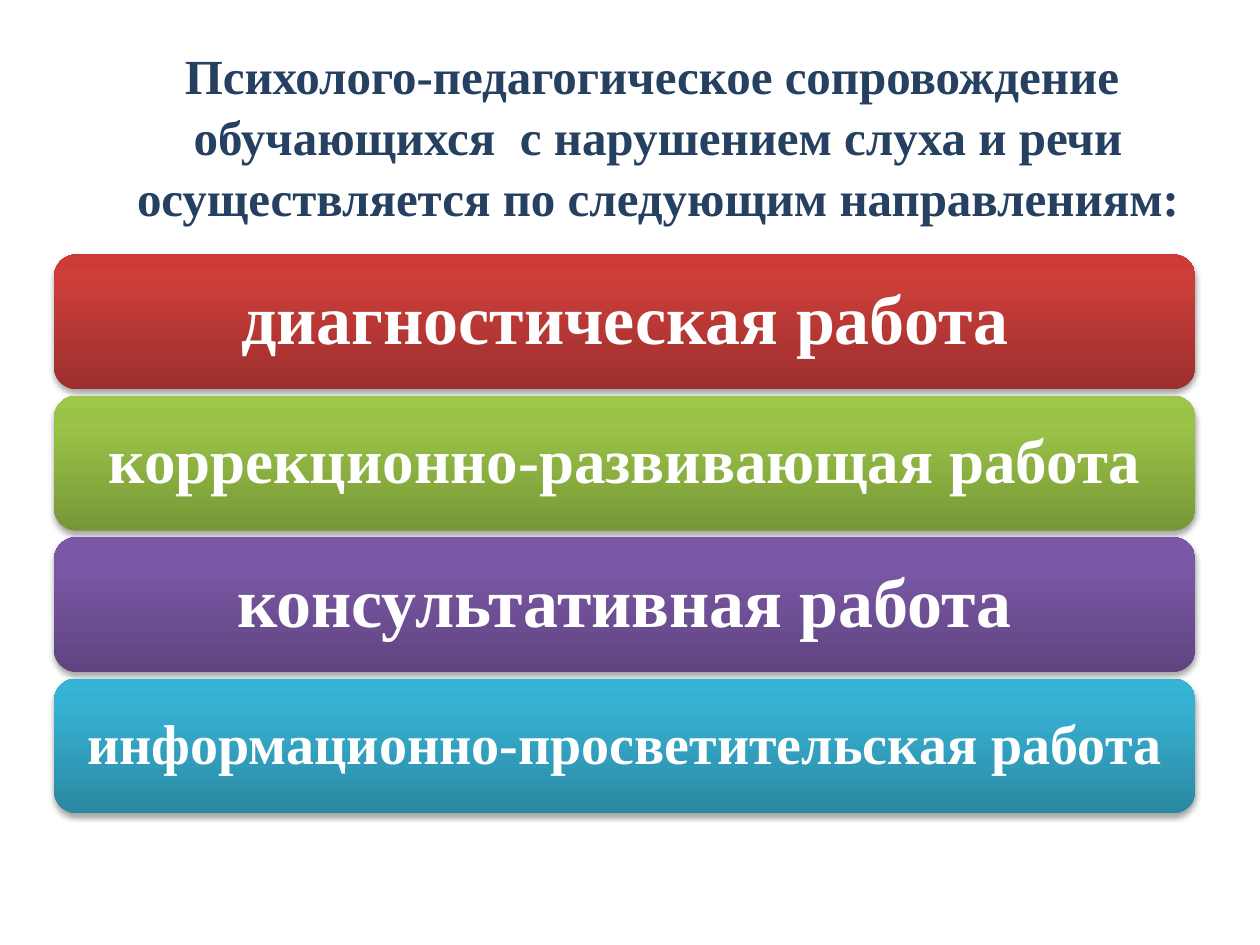
"""Build a slide with a title and four stacked coloured bars."""
import pptx
import pptx.dml.color
import pptx.enum.shapes
import pptx.enum.text
import pptx.oxml
import pptx.oxml.ns
import pptx.util

Cm = pptx.util.Cm
Pt = pptx.util.Pt
NAMESPACE = pptx.oxml.ns.nsdecls("a")

TITLE = ("Психолого-педагогическое сопровождение  обучающихся  с нарушением "
         "слуха и речи осуществляется по следующим направлениям:")
DIRECTIONS = [
    ("диагностическая работа", 40, ("9C2F2D", "CB3E3A", "CE3B37")),
    ("коррекционно-развивающая работа", 36, ("779737", "9BC348", "9DC746")),
    ("консультативная работа", 40, ("5F4480", "7B58A6", "7C57A8")),
    ("информационно-просветительская работа", 32, ("2A88A2", "37B1D2", "34B4D6")),
]
BAR_TOP, BAR_PITCH = 5.13, 2.85


def color(value):
    return pptx.dml.color.RGBColor.from_string(value)


def apply(target, values):
    for name, value in values.items():
        setattr(target, name, value)


class SlideBuilder:
    font = {"name": "Times New Roman", "bold": True}
    centered = {"alignment": pptx.enum.text.PP_ALIGN.CENTER}
    stops = (0, 80, 100)

    def __init__(self, page):
        self.page = page

    def span(self, para, text, size, hex_color):
        span = para.add_run()
        span.text = text
        apply(span.font, {**self.font, "size": Pt(size)})
        span.font.color.rgb = color(hex_color)

    def title(self, text, left, top, width, height):
        box = self.page.shapes.add_textbox(Cm(left), Cm(top), Cm(width), Cm(height))
        box.text_frame.word_wrap = True
        para = box.text_frame.paragraphs[0]
        apply(para, {**self.centered, "line_spacing": 1.04})
        properties = para._p.get_or_add_pPr()
        properties.set("marL", str(Cm(0.95)))
        properties.set("indent", str(Cm(-0.95)))
        self.span(para, "\t", 24, "002060")
        self.span(para, text, 28, "254061")

    def gradient(self, shape, colors):
        stops = "".join(
            f'<a:gs pos="{stop * 1000}"><a:srgbClr val="{value}"/></a:gs>'
            for stop, value in zip(self.stops, colors))
        shape._element.spPr.append(pptx.oxml.parse_xml(
            f'<a:gradFill {NAMESPACE} rotWithShape="1"><a:gsLst>{stops}</a:gsLst>'
            '<a:lin ang="16200000" scaled="0"/></a:gradFill>'))

    def drop_shadow(self, shape):
        shape.shadow.inherit = False
        effects = shape._element.spPr.find(pptx.oxml.ns.qn("a:effectLst"))
        effects.append(pptx.oxml.parse_xml(
            f'<a:outerShdw {NAMESPACE} blurRad="{Pt(3.1)}" dist="{Pt(1.8)}" '
            'dir="5400000" rotWithShape="0"><a:srgbClr val="000000">'
            '<a:alpha val="35000"/></a:srgbClr></a:outerShdw>'))

    def bar(self, text, size, colors, left, top, width, height):
        shape = self.page.shapes.add_shape(
            pptx.enum.shapes.MSO_SHAPE.ROUNDED_RECTANGLE,
            Cm(left), Cm(top), Cm(width), Cm(height))
        self.gradient(shape, colors)
        shape.line.fill.background()
        self.drop_shadow(shape)
        apply(shape.text_frame, {
            "word_wrap": True,
            "vertical_anchor": pptx.enum.text.MSO_ANCHOR.MIDDLE,
            "margin_left": Cm(0.33), "margin_right": Cm(0.33),
            "margin_top": Cm(0.2), "margin_bottom": Cm(0.2)})
        para = shape.text_frame.paragraphs[0]
        apply(para, {**self.centered, "line_spacing": 0.9})
        self.span(para, text, size, "FFFFFF")


def main():
    deck = pptx.Presentation()
    apply(deck, {"slide_width": Cm(25.4), "slide_height": Cm(19.05)})
    builder = SlideBuilder(deck.slides.add_slide(deck.slide_layouts[6]))
    builder.title(TITLE, 0.89, 0.74, 23.8, 4.6)
    for index, (text, size, colors) in enumerate(DIRECTIONS):
        builder.bar(text, size, colors, 1.09, BAR_TOP + index * BAR_PITCH, 23.01, 2.72)
    deck.save("out.pptx")


if __name__ == "__main__":
    main()
